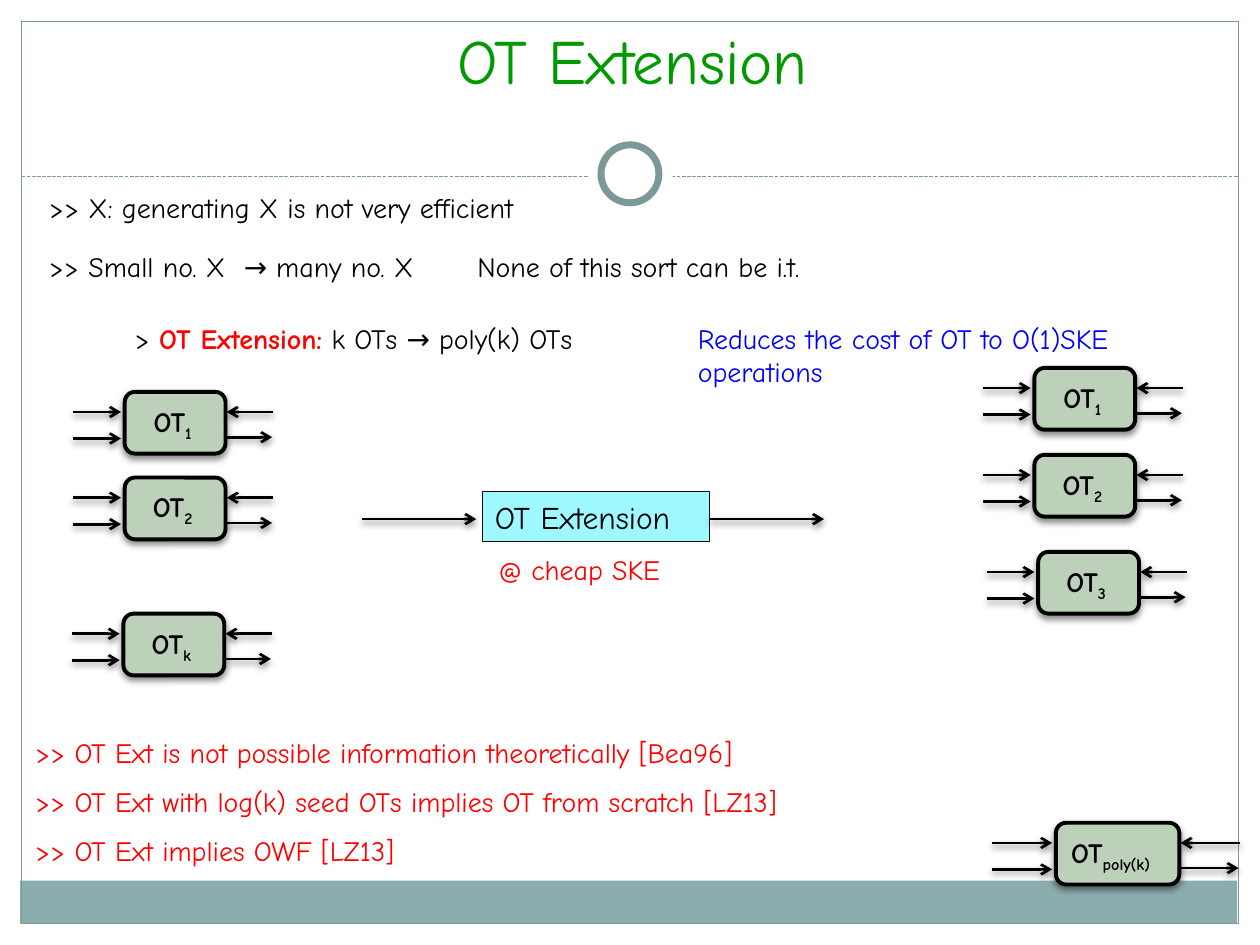
from pptx import Presentation
from pptx.dml.color import RGBColor as RGB
from pptx.enum.dml import MSO_LINE as DASH
from pptx.enum.shapes import MSO_CONNECTOR as CONN, MSO_SHAPE as SHAPE
from pptx.enum.text import PP_ALIGN as ALIGN
from pptx.oxml import parse_xml
from pptx.util import Inches, Pt

COLORS = {
    "white": "FFFFFF", "black": "000000", "band": "8CADAE", "frame": "7C999A",
    "title": "009900", "red": "FF0000", "blue": "0000FF",
    "cyan": "9DF9FF", "outline": "0D0D0D", "green": "BCD0BA",
}
C = {name: RGB.from_string(value) for name, value in COLORS.items()}
NS = 'xmlns:a="http://schemas.openxmlformats.org/drawingml/2006/main"'
SHADOW = (f'<a:effectLst {NS}><a:outerShdw blurRad="50800" dist="25400" dir="5400000" '
          'rotWithShape="0"><a:srgbClr val="000000"><a:alpha val="45000"/></a:srgbClr>'
          '</a:outerShdw></a:effectLst>')


def add_text(shapes, box, paragraphs, color, size=16, align=ALIGN.LEFT, wrap=True):
    sp = shapes.add_textbox(*map(Inches, box))
    tf = sp.text_frame
    tf.word_wrap = wrap
    for i, text in enumerate(paragraphs):
        p = tf.add_paragraph() if i else tf.paragraphs[0]
        p.text = text
        p.alignment = align
        p.font.name = "Comic Neue"
        p.font.size = Pt(size)
        p.font.color.rgb = C[color]
        if i:
            p.space_before = Pt(8.7)
    return tf.paragraphs[0]


def add_arrow(shapes, x1, x2, y):
    line = shapes.add_connector(CONN.STRAIGHT, Inches(x1), Inches(y), Inches(x2), Inches(y))
    line.line.color.rgb = C["black"]
    line.line.width = Pt(1.57)
    line.line._get_or_add_ln().append(parse_xml(f'<a:tailEnd {NS} type="arrow"/>'))
    line._element.spPr.append(parse_xml(SHADOW))


prs = Presentation()
prs.slide_width, prs.slide_height = Inches(10), Inches(7.5)
s = prs.slides.add_slide(prs.slide_layouts[6])

for box, fill in [
    ((0, 0, 10, 1.52), "white"),
    ((0, 0, 0.17, 7.5), "white"),
    ((9.83, 0, 0.17, 7.5), "white"),
    ((0.16, 6.99, 9.66, 0.34), "band"),
]:
    sp = s.shapes.add_shape(SHAPE.RECTANGLE, *map(Inches, box))
    sp.shadow.inherit = False
    sp.fill.solid()
    sp.fill.fore_color.rgb = C[fill]
    sp.line.fill.background()

frame = s.shapes.add_shape(SHAPE.RECTANGLE, *map(Inches, (0.17, 0.17, 9.66, 7.16)))
frame.shadow.inherit = False
frame.fill.background()
frame.line.color.rgb = C["frame"]
frame.line.width = Pt(0.75)

divider = s.shapes.add_connector(CONN.STRAIGHT, Inches(0.17), Inches(1.4), Inches(9.83), Inches(1.4))
divider.line.color.rgb = C["frame"]
divider.line.width = Pt(0.75)
divider.line.dash_style = DASH.SQUARE_DOT
divider._element.spPr.append(parse_xml(f"<a:effectLst {NS}/>"))

for x, y, size in [(4.67, 1.05, 0.67), (4.77, 1.15, 0.46)]:
    ring = s.shapes.add_shape(SHAPE.OVAL, Inches(x), Inches(y), Inches(size), Inches(size))
    ring.shadow.inherit = False
    ring.fill.solid()
    ring.fill.fore_color.rgb = C["white"]
    ring.line.fill.background()
ring.line.color.rgb = C["frame"]
ring.line.width = Pt(4)

add_text(s.shapes, (0.2, 0.12, 9.64, 1.17), ["OT Extension"], "title", 36, ALIGN.CENTER)
add_text(s.shapes, (0.29, 1.93, 3.4, 0.37), [">> Small no. X  → many no. X"], "black")
p = add_text(s.shapes, (0.97, 2.5, 7.41, 0.37), ["> "], "black")
r = p.add_run()
r.text = "OT Extension:"
r.font.bold = True
r.font.color.rgb = C["red"]
p.add_run().text = " k OTs → poly(k) OTs"
add_text(s.shapes, (0.29, 1.46, 4.32, 0.37), [">> X: generating X is not very efficient"], "black")
add_text(s.shapes, (3.69, 1.93, 3.4, 0.37), ["None of this sort can be i.t."], "black")

sp = s.shapes.add_shape(SHAPE.RECTANGLE, *map(Inches, (3.83, 3.9, 1.8, 0.4)))
sp.shadow.inherit = False
sp.fill.solid()
sp.fill.fore_color.rgb = C["cyan"]
sp.line.color.rgb = C["outline"]
sp.line.width = Pt(0.75)
p = sp.text_frame.paragraphs[0]
p.text = "OT Extension"
p.alignment = ALIGN.LEFT
p.font.name = "Comic Neue"
p.font.size = Pt(18)
p.font.color.rgb = C["black"]
add_arrow(s.shapes, 2.87, 3.78, 4.12)
add_arrow(s.shapes, 5.63, 6.54, 4.12)
add_text(s.shapes, (3.86, 4.34, 1.58, 0.37), ["@ cheap SKE"], "red", wrap=False)

small = (0.8, 0.41, 0.03, 0.82)
large = (0.98, 0.51, 0.13, 1.13)
for index, x, y, (width, reach, text_shift, text_width) in [
    ("1", 0.99, 3.11, small),
    ("2", 0.99, 3.79, small),
    ("k", 0.98, 4.87, small),
    ("1", 8.21, 2.92, small),
    ("2", 8.21, 3.61, small),
    ("3", 8.24, 4.38, small),
    ("poly(k)", 8.38, 6.53, large),
]:
    group = s.shapes.add_group_shape().shapes
    sp = group.add_shape(SHAPE.ROUNDED_RECTANGLE, *map(Inches, (x, y, width, 0.49)))
    sp.fill.solid()
    sp.fill.fore_color.rgb = C["green"]
    sp.line.color.rgb = C["black"]
    sp.line.width = Pt(2.25)
    sp._element.spPr.append(parse_xml(SHADOW))
    p = add_text(group, (x - text_shift, y + 0.05, text_width, 0.37), ["OT"], "black", align=ALIGN.CENTER)
    p.font.bold = True
    r = p.add_run()
    r.text = index
    r.font._element.set("baseline", "-25000")
    right = x + width + 0.01
    far = x + width + reach - 0.04
    add_arrow(group, x - reach, x - 0.03, y + 0.16)
    add_arrow(group, x - reach, x - 0.03, y + 0.37)
    add_arrow(group, right, far, y + 0.36)
    add_arrow(group, far + 0.01, right, y + 0.16)

add_text(s.shapes, (0.18, 5.79, 6.88, 1.18), [
    ">> OT Ext is not possible information theoretically [Bea96]",
    ">> OT Ext with log(k) seed OTs implies OT from scratch [LZ13]",
    ">> OT Ext implies OWF [LZ13]",
], "red")
add_text(s.shapes, (5.44, 2.5, 4.39, 0.64), ["Reduces the cost of OT to O(1)SKE operations"], "blue")

prs.save("out.pptx")
